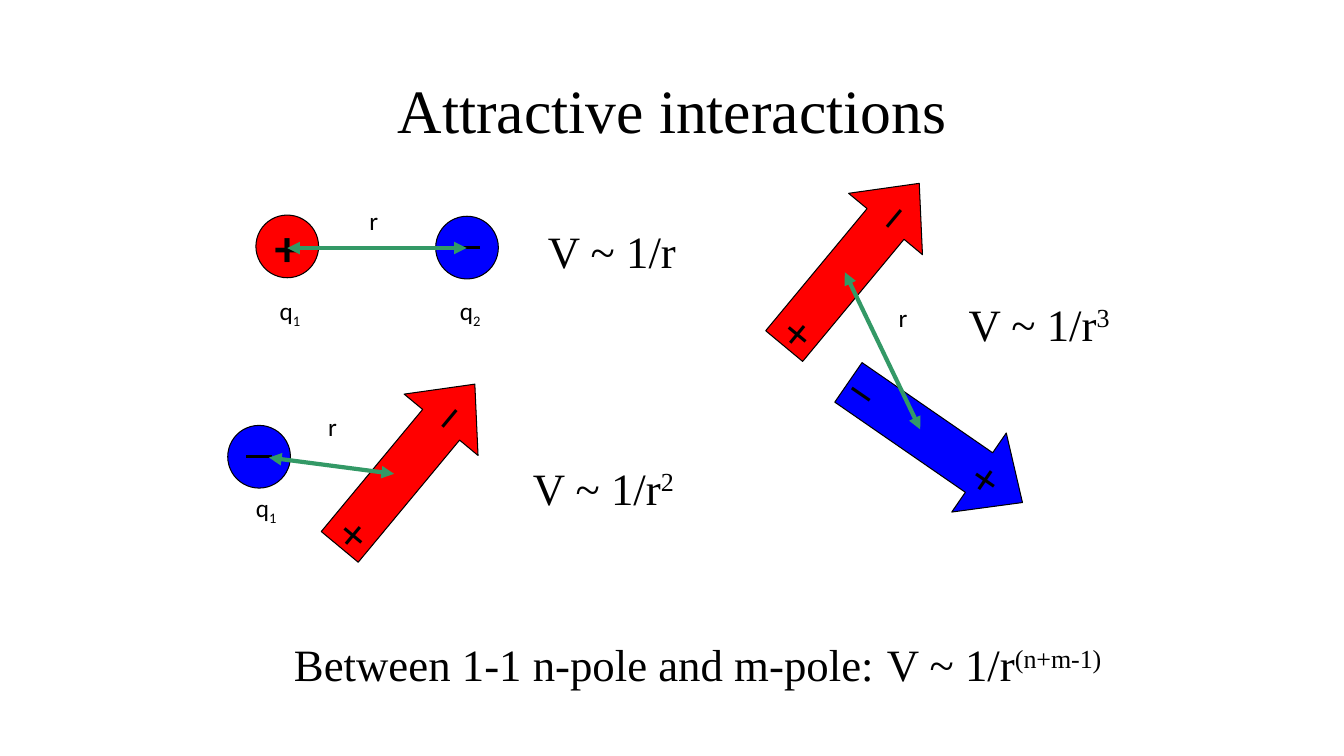
from lxml.etree import SubElement
from pptx import Presentation
from pptx.dml.color import RGBColor
from pptx.enum.shapes import MSO_CONNECTOR, MSO_SHAPE
from pptx.enum.text import MSO_ANCHOR, MSO_AUTO_SIZE, PP_ALIGN
from pptx.oxml.ns import qn
from pptx.util import Cm, Pt

COLORS = {"ink": "000000", "red": "FF0000", "blue": "0000FF", "distance": "339966"}
SERIF, SANS, SIGN_FONT = "Times New Roman", "Calibri", "Arial"
DIAMETER = 1.58
DIPOLE_WIDTH, DIPOLE_HEIGHT = 5.33, 2.42


def color(name):
    return RGBColor.from_string(COLORS[name])


def format_run(run, font, size, bold=False, baseline=0):
    run.font.name = font
    run.font.size = Pt(size)
    run.font.bold = bold
    run.font.color.rgb = color("ink")
    if baseline:
        run.font._element.set("baseline", str(baseline * 1000))


def add_label(slide, left, top, width, height, text, script="",
              font=SERIF, size=32, baseline=30):
    """Text box with an optional raised or lowered ending."""
    box = slide.shapes.add_textbox(Cm(left), Cm(top), Cm(width), Cm(height))
    frame = box.text_frame
    frame.word_wrap = False
    frame.auto_size = MSO_AUTO_SIZE.SHAPE_TO_FIT_TEXT
    para = frame.paragraphs[0]
    para.text = text
    format_run(para.runs[0], font, size)
    if script:
        run = para.add_run()
        run.text = script
        format_run(run, font, size, baseline=baseline)


def add_symbol(slide, left, top, text, script="", width=1.06):
    add_label(slide, left, top, width, 1.02, text, script, SANS, 18, -25)


def add_line(slide, start, end, color_name, weight, arrows=False):
    line = slide.shapes.add_connector(
        MSO_CONNECTOR.STRAIGHT, *(Cm(value) for value in (*start, *end)))
    line.line.color.rgb = color(color_name)
    line.line.width = Pt(weight)
    if arrows:
        outline = line.line._get_or_add_ln()
        for end_name in ("a:headEnd", "a:tailEnd"):
            SubElement(outline, qn(end_name), type="triangle")
    SubElement(line._element.spPr, qn("a:effectLst"))


def add_filled(slide, kind, left, top, width, height, fill):
    shape = slide.shapes.add_shape(kind, Cm(left), Cm(top), Cm(width), Cm(height))
    shape.shadow.inherit = False
    shape.fill.solid()
    shape.fill.fore_color.rgb = color(fill)
    shape.line.color.rgb = color("ink")
    shape.line.width = Pt(0.75)
    shape.text_frame.vertical_anchor = MSO_ANCHOR.MIDDLE
    return shape


def add_positive_charge(slide, left, top):
    circle = add_filled(slide, MSO_SHAPE.OVAL, left, top, DIAMETER, DIAMETER, "red")
    frame = circle.text_frame
    frame.word_wrap = False
    para = frame.paragraphs[0]
    para.text = "+"
    para.alignment = PP_ALIGN.CENTER
    format_run(para.runs[0], SANS, 36, bold=True)


def add_negative_charge(slide, left, top):
    add_filled(slide, MSO_SHAPE.OVAL, left, top, DIAMETER, DIAMETER, "blue")
    middle_x, middle_y = left + DIAMETER / 2, top + DIAMETER / 2
    add_line(slide, (middle_x - 0.33, middle_y), (middle_x + 0.33, middle_y), "ink", 2.25)


def add_dipole(slide, left, top, rotation, fill, tail_sign, head_sign):
    arrow = add_filled(slide, MSO_SHAPE.RIGHT_ARROW, left, top,
                       DIPOLE_WIDTH, DIPOLE_HEIGHT, fill)
    arrow.adjustments[0], arrow.adjustments[1] = 0.5, 0.55
    arrow.rotation = rotation
    frame = arrow.text_frame
    frame.word_wrap = True
    frame.margin_left, frame.margin_right = Cm(0.1), Cm(0)
    para = frame.paragraphs[0]
    para.text = f"{tail_sign}\t{head_sign}"
    para.alignment = PP_ALIGN.LEFT
    # A tab stop sets the head sign apart from the tail sign
    tabs = SubElement(para._p.get_or_add_pPr(), qn("a:tabLst"))
    SubElement(tabs, qn("a:tab"), pos=str(Cm(3.81)), algn="l")
    for run in para.runs:
        format_run(run, SIGN_FONT, 32)


def add_distance(slide, start, end, label_left, label_top):
    add_line(slide, start, end, "distance", 3, arrows=True)
    add_symbol(slide, label_left, label_top, "r", width=0.74)


def add_title(slide, text):
    title = slide.shapes.title
    title.left, title.top, title.width, title.height = Cm(2.34), Cm(1.02), Cm(29.21), Cm(3.68)
    title.text_frame.text = text
    title.text_frame.vertical_anchor = MSO_ANCHOR.MIDDLE
    para = title.text_frame.paragraphs[0]
    para.alignment = PP_ALIGN.CENTER
    para.line_spacing = 0.9
    format_run(para.runs[0], SERIF, 44)


def main():
    deck = Presentation()
    deck.slide_width, deck.slide_height = Cm(33.87), Cm(19.05)
    slide = deck.slides.add_slide(deck.slide_layouts[5])
    add_title(slide, "Attractive interactions")

    # Charge and charge
    add_positive_charge(slide, 6.45, 5.42)
    add_negative_charge(slide, 10.98, 5.45)
    add_symbol(slide, 6.8, 7.32, "q", "1")
    add_symbol(slide, 11.34, 7.32, "q", "2")
    add_distance(slide, (7.24, 6.25), (11.76, 6.25), 9.06, 5.06)
    add_label(slide, 13.56, 5.51, 3.76, 1.6, "V ~ 1/r")

    # Charge and dipole
    add_symbol(slide, 6.2, 12.28, "q", "1")
    add_dipole(slide, 7.6, 10.52, 309.7, "red", "+", "−")
    add_negative_charge(slide, 5.74, 10.72)
    add_distance(slide, (6.78, 11.53), (9.93, 11.94), 8.02, 10.24)
    add_label(slide, 13.18, 11.48, 4.11, 1.6, "V ~ 1/r", "2")

    # Dipole and dipole
    add_dipole(slide, 18.8, 5.46, 309.7, "red", "+", "−")
    add_dipole(slide, 20.91, 9.94, 34.6, "blue", "−", "+")
    add_distance(slide, (21.29, 6.86), (23.19, 10.82), 22.4, 7.5)
    add_label(slide, 24.16, 7.34, 4.11, 1.6, "V ~ 1/r", "3")

    # General rule
    add_label(slide, 7.16, 15.93, 15.27, 1.62, "Between 1-1 n-pole and m-pole:")
    add_label(slide, 22.1, 15.93, 6.3, 1.62, "V ~ 1/r", "(n+m-1)")

    deck.save("out.pptx")


if __name__ == "__main__":
    main()
